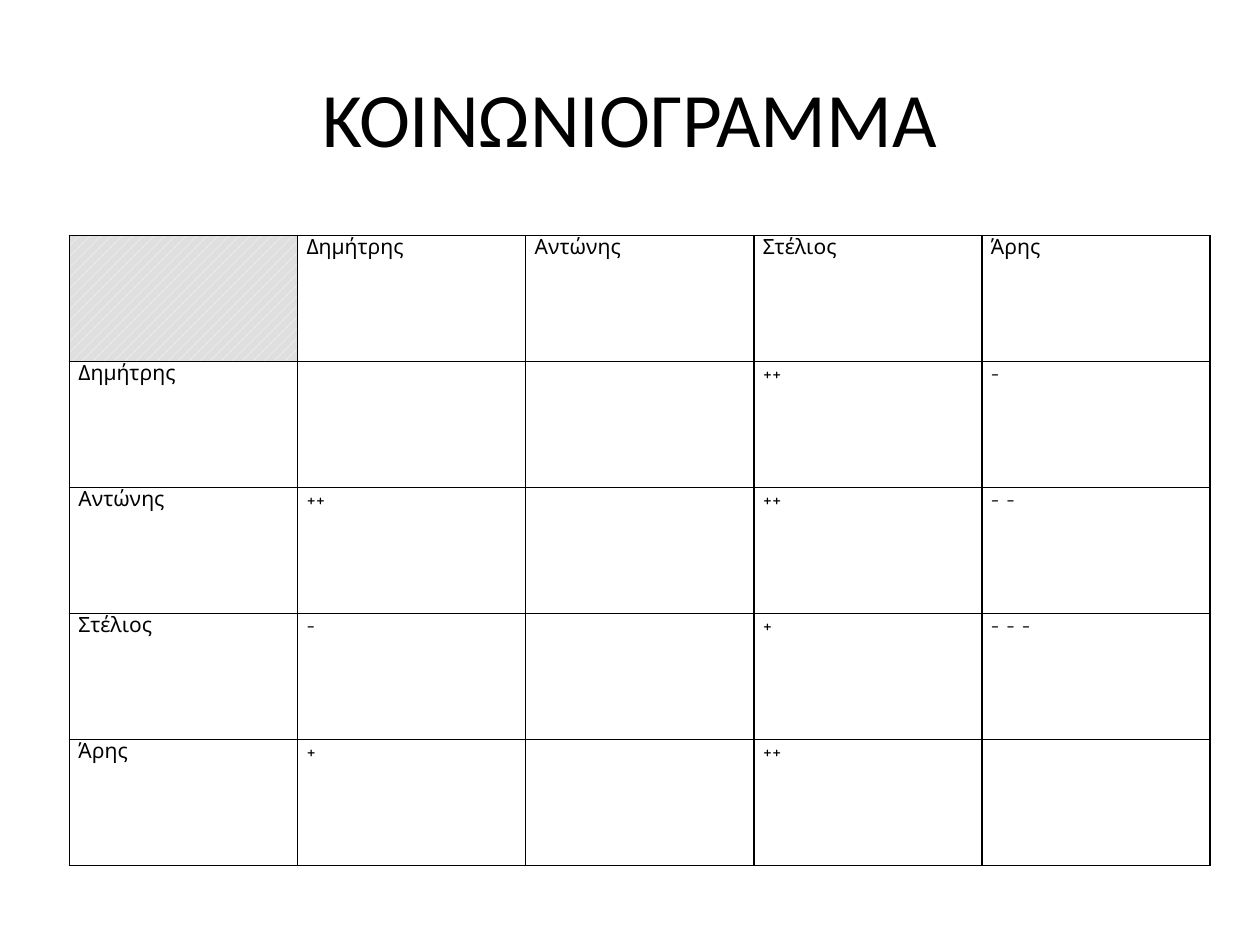
from lxml.etree import SubElement as Sub
from pptx import Presentation
from pptx.dml.color import RGBColor
from pptx.enum.dml import MSO_PATTERN as Pat
from pptx.enum.text import MSO_ANCHOR as Anchor, PP_ALIGN as Align
from pptx.oxml.ns import qn
from pptx.util import Cm, Pt

BLACK, WHITE, GREY = "000000", "FFFFFF", "DFDFDF"
NAMES = ["Δημήτρης", "Αντώνης", "Στέλιος", "Άρης"]
# Each row rates the four people in the order of NAMES
MARKS = [
    ["", "", "++", "-"],
    ["++", "", "++", "- -"],
    ["-", "", "+", "- - -"],
    ["+", "", "++", ""],
]


def color(code):
    return RGBColor.from_string(code)


def write(frame, text, font="Comic Neue", size=12, tint=BLACK, align=Align.JUSTIFY):
    para = frame.paragraphs[0]
    para.alignment = align
    para.font.size = Pt(size)
    if text:
        run = para.add_run()
        run.text = text
        run.font.name = font
        run.font.size = Pt(size)
        run.font.color.rgb = color(tint)


def add_edges(cell, tint=BLACK, width=1):
    # Borders must come before the fill in the cell properties
    props = cell._tc.get_or_add_tcPr()
    for side in ("lnL", "lnR", "lnT", "lnB"):
        line = Sub(props, qn(f"a:{side}"), w=str(Pt(width)))
        fill = Sub(line, qn("a:solidFill"))
        Sub(fill, qn("a:srgbClr"), val=tint)


def add_title(slide, text, left, top, width, height):
    title = slide.shapes.title
    title.left, title.top = Cm(left), Cm(top)
    title.width, title.height = Cm(width), Cm(height)
    title.text_frame.vertical_anchor = Anchor.MIDDLE
    write(title.text_frame, text, font="Calibri", size=44, align=Align.CENTER)


def add_grid(slide, left, top, width, height):
    rows = [["", *NAMES]] + [[name, *marks] for name, marks in zip(NAMES, MARKS)]
    count = len(rows)
    table = slide.shapes.add_table(
        count, count, Cm(left), Cm(top), Cm(width), Cm(height)
    ).table
    table.first_row = table.horz_banding = False
    for col in table.columns:
        col.width = Cm(width / count)
    for row in table.rows:
        row.height = Cm(height / count)

    # Cells
    for r, row in enumerate(rows):
        for c, text in enumerate(row):
            cell = table.cell(r, c)
            cell.margin_left = cell.margin_right = Cm(0.18)
            cell.margin_top = cell.margin_bottom = 0
            cell.vertical_anchor = Anchor.TOP
            add_edges(cell)
            cell.fill.background()
            write(cell.text_frame, text)

    # Shaded corner
    fill = table.cell(0, 0).fill
    fill.patterned()
    fill.pattern = Pat.PERCENT_20
    fill.fore_color.rgb = color(WHITE)
    fill.back_color.rgb = color(GREY)


def main():
    deck = Presentation()
    deck.slide_width, deck.slide_height = Cm(25.4), Cm(19.05)
    slide = deck.slides.add_slide(deck.slide_layouts[5])
    add_title(slide, "ΚΟΙΝΩΝΙΟΓΡΑΜΜΑ", 1.27, 0.76, 22.86, 3.18)
    add_grid(slide, 1.4, 4.75, 23, 12.7)
    deck.save("out.pptx")


if __name__ == "__main__":
    main()
